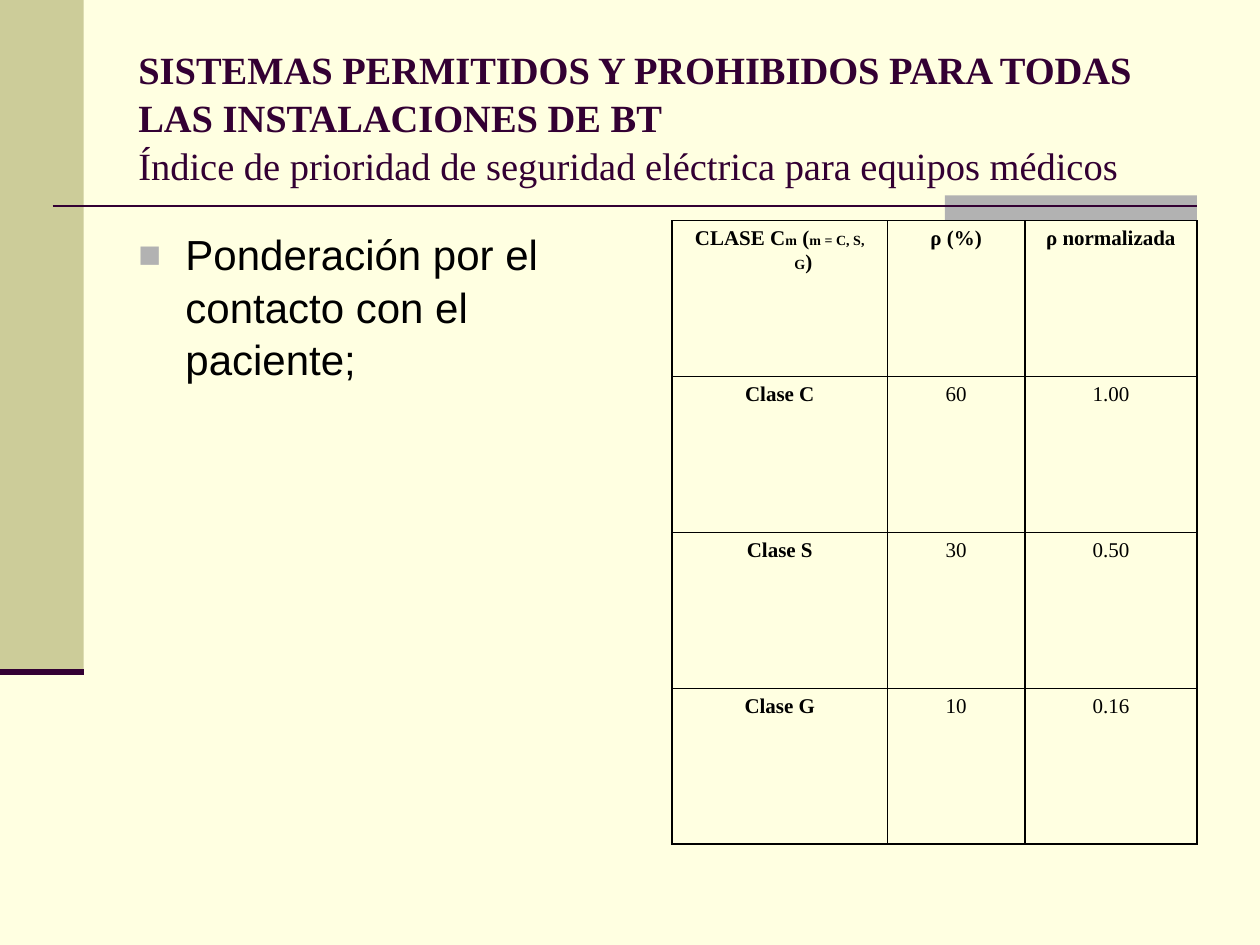
from lxml import etree
from pptx import Presentation
from pptx import util as u
from pptx.dml.color import RGBColor
from pptx.enum import shapes, text
from pptx.oxml.ns import qn

INK, SAND, GRAY, CREAM, BLACK = "330033", "CCCC99", "B2B2B2", "FFFFE1", "000000"
SERIF = "Times New Roman"


def color(value):
    return RGBColor.from_string(value)


def write(paragraph, words, size=12, font=SERIF, ink=BLACK, bold=False, hanging=False):
    run = paragraph.add_run()
    run.text = words
    run.font.size = u.Pt(size)
    run.font.name = font
    run.font.bold = bold
    run.font.color.rgb = color(ink)
    if hanging:
        props = paragraph._p.get_or_add_pPr()
        props.set("marL", str(u.Cm(0.95)))
        props.set("indent", str(u.Cm(-0.95)))


prs = Presentation()
prs.slide_width, prs.slide_height = u.Cm(25.4), u.Cm(19.05)
slide = prs.slides.add_slide(prs.slide_layouts[6])
slide.background.fill.solid()
slide.background.fill.fore_color.rgb = color(CREAM)

for x, y, width, height, fill in [(0, 0, 1.69, 13.55, SAND), (19.05, 3.94, 5.08, 0.51, GRAY)]:
    band = slide.shapes.add_shape(
        shapes.MSO_SHAPE.RECTANGLE, u.Cm(x), u.Cm(y), u.Cm(width), u.Cm(height))
    band.shadow.inherit = False
    band.fill.solid()
    band.fill.fore_color.rgb = color(fill)
    band.line.fill.background()

for start, end, y, weight in [(1.06, 24.13, 4.15, 1.5), (0, 1.69, 13.55, 3.5)]:
    rule = slide.shapes.add_connector(
        shapes.MSO_CONNECTOR.STRAIGHT, u.Cm(start), u.Cm(y), u.Cm(end), u.Cm(y))
    rule.line.color.rgb = color(INK)
    rule.line.width = u.Pt(weight)
    etree.SubElement(rule._element.spPr, qn("a:effectLst"))

heading = slide.shapes.add_textbox(u.Cm(2.54), u.Cm(0.76), u.Cm(21.59), u.Cm(3.18)).text_frame
heading.word_wrap = True
heading.vertical_anchor = text.MSO_ANCHOR.MIDDLE
title = heading.paragraphs[0]
title.line_spacing = 1.04
write(title, "SISTEMAS PERMITIDOS Y PROHIBIDOS PARA TODAS LAS INSTALACIONES DE BT ",
      size=22, ink=INK, bold=True)
title.add_line_break()
write(title, "Índice de prioridad de seguridad eléctrica para equipos médicos", size=22, ink=INK)

body = slide.shapes.add_textbox(u.Cm(2.54), u.Cm(4.45), u.Cm(10.58), u.Cm(12.57)).text_frame
body.word_wrap = True
weighting = body.paragraphs[0]
weighting.line_spacing = 1.04
weighting.space_before = u.Pt(4.8)
write(weighting, "Ponderación por el contacto con el paciente;", size=24, font="Arial", hanging=True)
bullet = weighting._p.get_or_add_pPr()
etree.SubElement(etree.SubElement(bullet, qn("a:buClr")), qn("a:srgbClr"), val=GRAY)
etree.SubElement(bullet, qn("a:buSzPct"), val="90000")
etree.SubElement(bullet, qn("a:buFont"), typeface="Arial")
etree.SubElement(bullet, qn("a:buChar"), char="■")

class_header = [("CLASE C", 12), ("m", 8), (" (", 12), ("m = C, S, G", 8), (")", 12)]
rows = [
    [class_header, "ρ (%)", "ρ normalizada"],
    ["Clase C", "60", "1.00"],
    ["Clase S", "30", "0.50"],
    ["Clase G", "10", "0.16"],
]
classes = slide.shapes.add_table(
    4, 3, u.Cm(13.55), u.Cm(4.45), u.Cm(10.58), u.Cm(12.57)).table
for column, width in zip(classes.columns, [4.34, 2.77, 3.47]):
    column.width = u.Cm(width)

for r, row in enumerate(rows):
    classes.rows[r].height = u.Cm(12.57 / len(rows))
    for c, content in enumerate(row):
        cell = classes.cell(r, c)
        entry = cell.text_frame.paragraphs[0]
        entry.alignment = text.PP_ALIGN.CENTER
        pieces = [(content, 12)] if isinstance(content, str) else content
        for words, size in pieces:
            write(entry, words, size=size, bold=r == 0 or c == 0, hanging=True)
        props = cell._tc.get_or_add_tcPr()
        for side in ("a:lnL", "a:lnR", "a:lnT", "a:lnB"):
            border = etree.SubElement(props, qn(side), w=str(u.Pt(1)))
            fill = etree.SubElement(border, qn("a:solidFill"))
            etree.SubElement(fill, qn("a:srgbClr"), val=BLACK)
        cell.fill.background()

prs.save("out.pptx")
